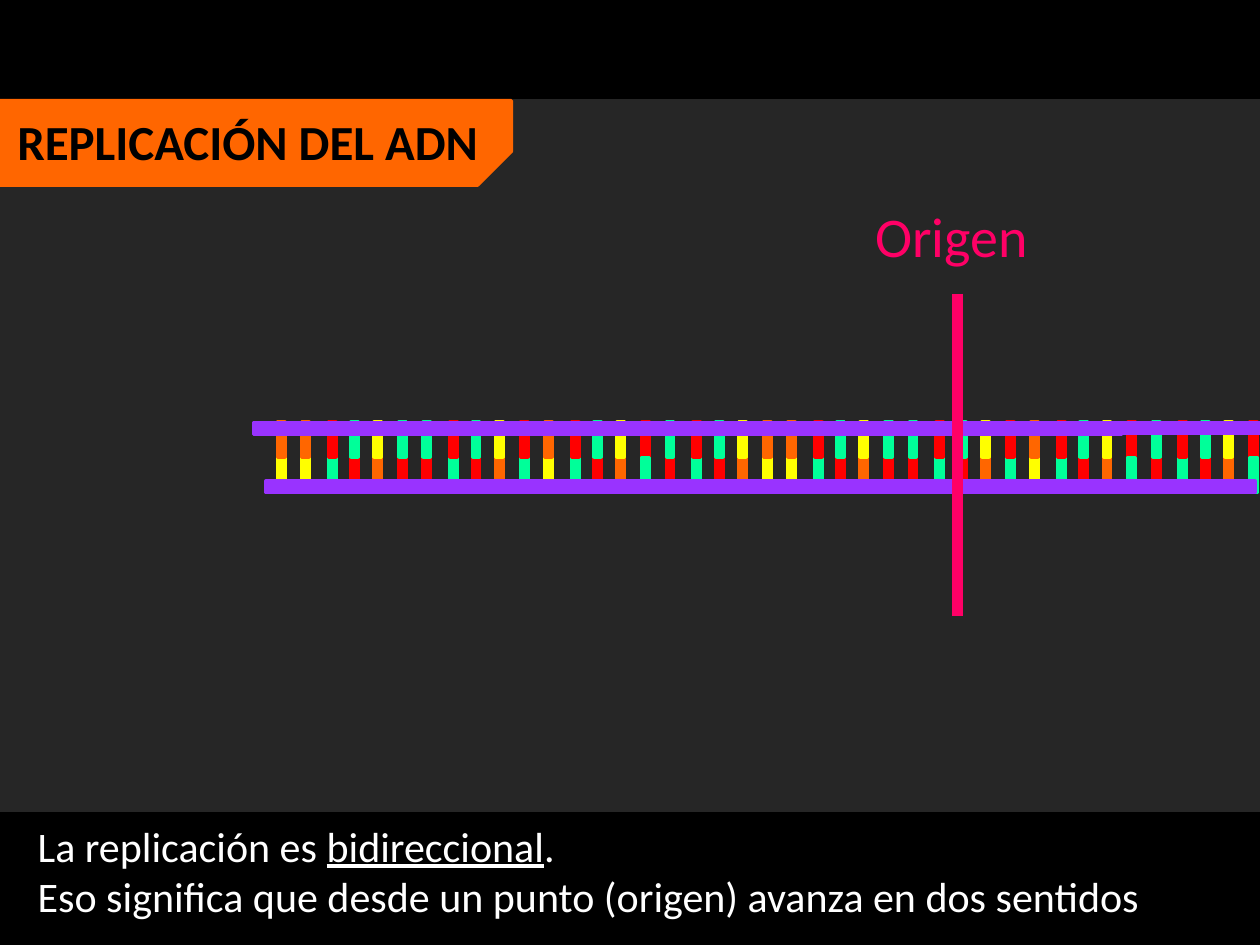
from dataclasses import dataclass
from pptx import Presentation as Deck
from pptx.dml.color import RGBColor as Rgb
from pptx.enum.shapes import MSO_CONNECTOR as Conn, MSO_SHAPE as Kind
from pptx.enum.text import MSO_AUTO_SIZE as Fit, PP_ALIGN as Align
from pptx.oxml.ns import qn
from pptx.util import Cm, Pt
from lxml.etree import SubElement as Sub


@dataclass(frozen=True)
class Theme:
    font: str = "Calibri"
    black: str = "000000"
    panel: str = "262626"
    white: str = "FFFFFF"
    pink: str = "FF0066"
    rail: str = "9933FF"
    red: str = "FF0000"
    green: str = "00FF99"
    orange: str = "FF6600"
    yellow: str = "FFFF00"
    title: int = 28
    label: int = 32
    body: int = 24
    edge: int = 2
    mark: int = 6


T = Theme()
BASES = {"R": T.red, "G": T.green, "O": T.orange, "Y": T.yellow}
PAIRS = {"R": "G", "G": "R", "O": "Y", "Y": "O"}

# Upper strand, in blocks of up to five bases
CYCLE = ["OORGY", "GGRGY", "RORGY", "RGRGY"]
BLOCKS = CYCLE * 2 + ["R"]
START, PITCH = 5.31, 2.45
STEPS = [0, 0.49, 1.03, 1.48, 1.95]


def add_box(slide, x, y, w, h, color, kind=Kind.RECTANGLE, turn=0):
    box = slide.shapes.add_shape(kind, Cm(x), Cm(y), Cm(w), Cm(h))
    box.shadow.inherit = False
    box.fill.solid()
    box.fill.fore_color.rgb = Rgb.from_string(color)
    box.line.color.rgb = Rgb.from_string(color)
    box.line.width = Pt(T.edge)
    box.rotation = turn
    return box


def add_text(slide, x, y, w, h, lines, size, color, bold=False,
             align=None, wrap=True):
    """Each line is a list of (words, underlined) pairs."""
    box = slide.shapes.add_textbox(Cm(x), Cm(y), Cm(w), Cm(h))
    frame = box.text_frame
    frame.word_wrap = wrap
    frame.auto_size = Fit.SHAPE_TO_FIT_TEXT
    for i, line in enumerate(lines):
        para = frame.add_paragraph() if i else frame.paragraphs[0]
        para.alignment = align
        for words, under in line:
            run = para.add_run()
            run.text = words
            font = run.font
            font.name, font.size, font.bold = T.font, Pt(size), bold
            font.underline = under
            font.color.rgb = Rgb.from_string(color)


def add_line(slide, x1, y1, x2, y2, color, width):
    line = slide.shapes.add_connector(
        Conn.STRAIGHT, Cm(x1), Cm(y1), Cm(x2), Cm(y2))
    line.line.color.rgb = Rgb.from_string(color)
    line.line.width = Pt(width)
    Sub(line._element.spPr, qn("a:effectLst"))


def add_pair(slide, x, base, raised):
    """Two facing bases; a raised lower one overlaps the upper one."""
    halves = [(9.5, PAIRS[base]), (8.79, base)]
    for y, key in reversed(halves) if raised else halves:
        add_box(slide, x, y, 0.71, 0.15, BASES[key], turn=90)


def add_helix(slide):
    last = len(BLOCKS) - 1
    # Base pairs
    for i, block in enumerate(BLOCKS):
        for j, (step, base) in enumerate(zip(STEPS, block)):
            raised = j == 0 and i in (3, 7, last)
            add_pair(slide, START + i * PITCH + step, base, raised)
    # Rails, one piece above and below each full block
    for i in range(last):
        x = START + i * PITCH
        add_box(slide, x + 0.05, 9.7, 2.79, 0.23, T.rail)
        top = x - (0.3 if i % 2 else 0.2)
        end = i == last - 1
        add_box(slide, top, 8.53, 25.4 - top if end else 2.79,
                0.2 if end else 0.23, T.rail)


def add_banner(slide):
    tab = add_box(slide, 0, 2.03, 10.31, 1.7, T.orange,
                  kind=Kind.SNIP_1_RECTANGLE, turn=180)
    tab.adjustments[0] = 0.4
    tab._element.spPr.xfrm.set("flipH", "1")
    add_text(slide, 0.1, 2.13, 9.91, 1.45, [[("REPLICACIÓN DEL ADN", None)]],
             T.title, T.black, bold=True, wrap=False)


def main():
    deck = Deck()
    deck.slide_width, deck.slide_height = Cm(25.4), Cm(19.05)
    slide = deck.slides.add_slide(deck.slide_layouts[6])

    # Backdrop and heading
    back = slide.background.fill
    back.solid()
    back.fore_color.rgb = Rgb.from_string(T.black)
    add_box(slide, 0, 2.03, 25.4, 14.3, T.panel)
    add_banner(slide)

    # DNA strand and its origin
    add_helix(slide)
    add_line(slide, 19.3, 5.92, 19.3, 12.42, T.pink, T.mark)
    add_text(slide, 17.09, 3.94, 4.19, 1.63, [[("Origen", None)]],
             T.label, T.pink, align=Align.CENTER)

    # Caption
    add_text(slide, 0.51, 16.41, 24.51, 2.31, [
        [("La replicación es ", None), ("bidireccional", True), (".", None)],
        [("Eso significa que desde un punto (origen) avanza en dos sentidos",
          None)],
    ], T.body, T.white)
    deck.save("out.pptx")


if __name__ == "__main__":
    main()
